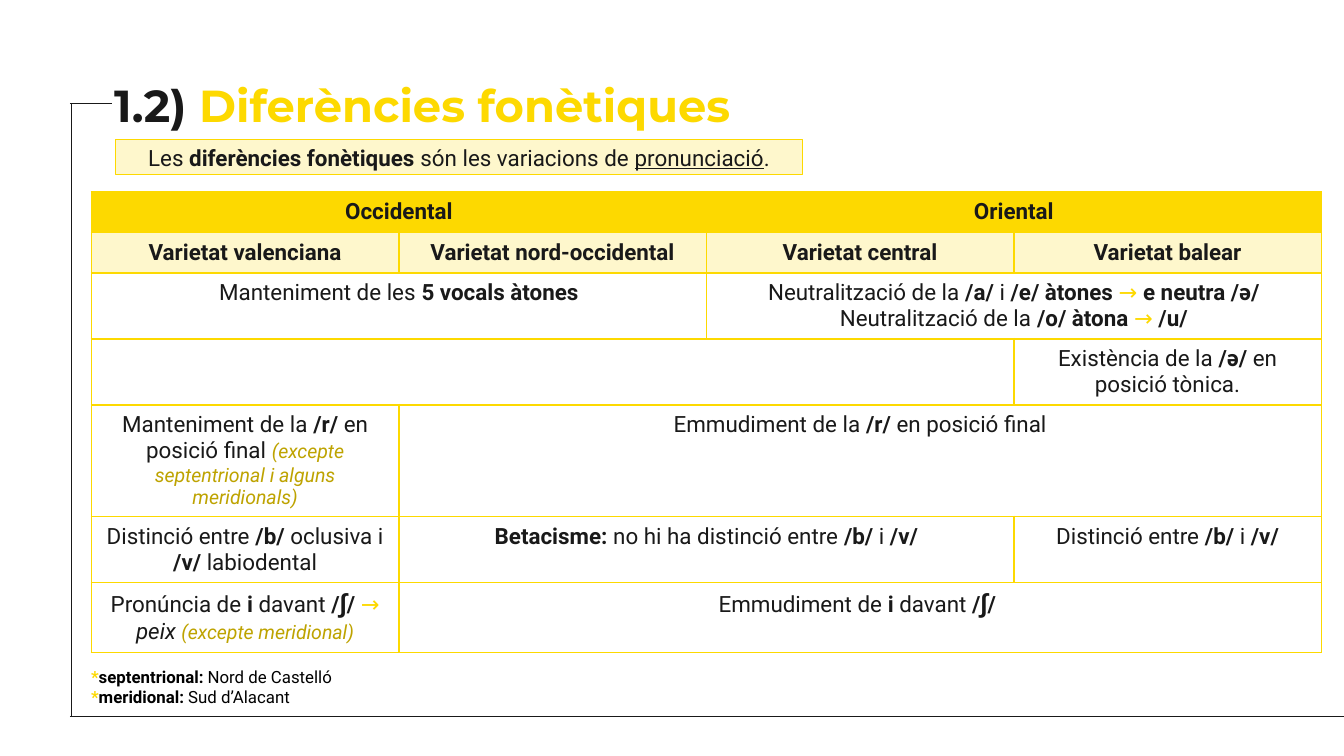
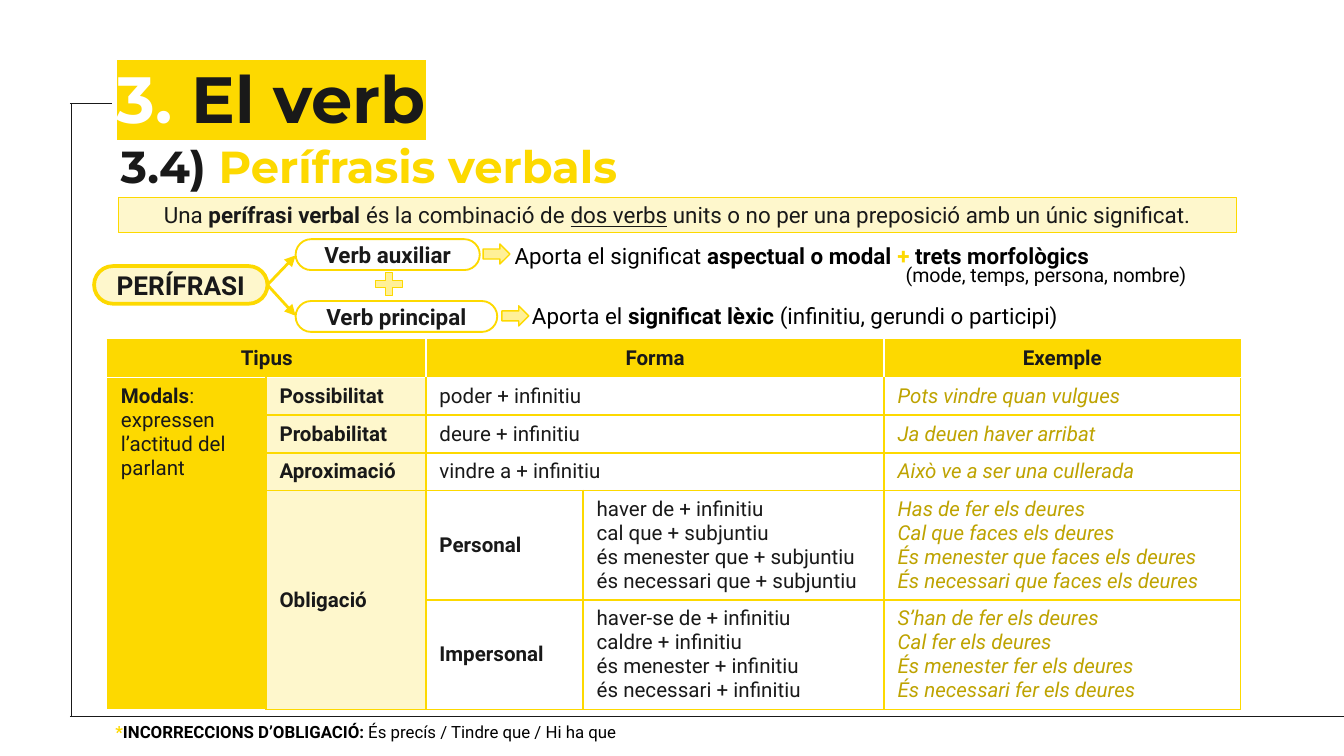
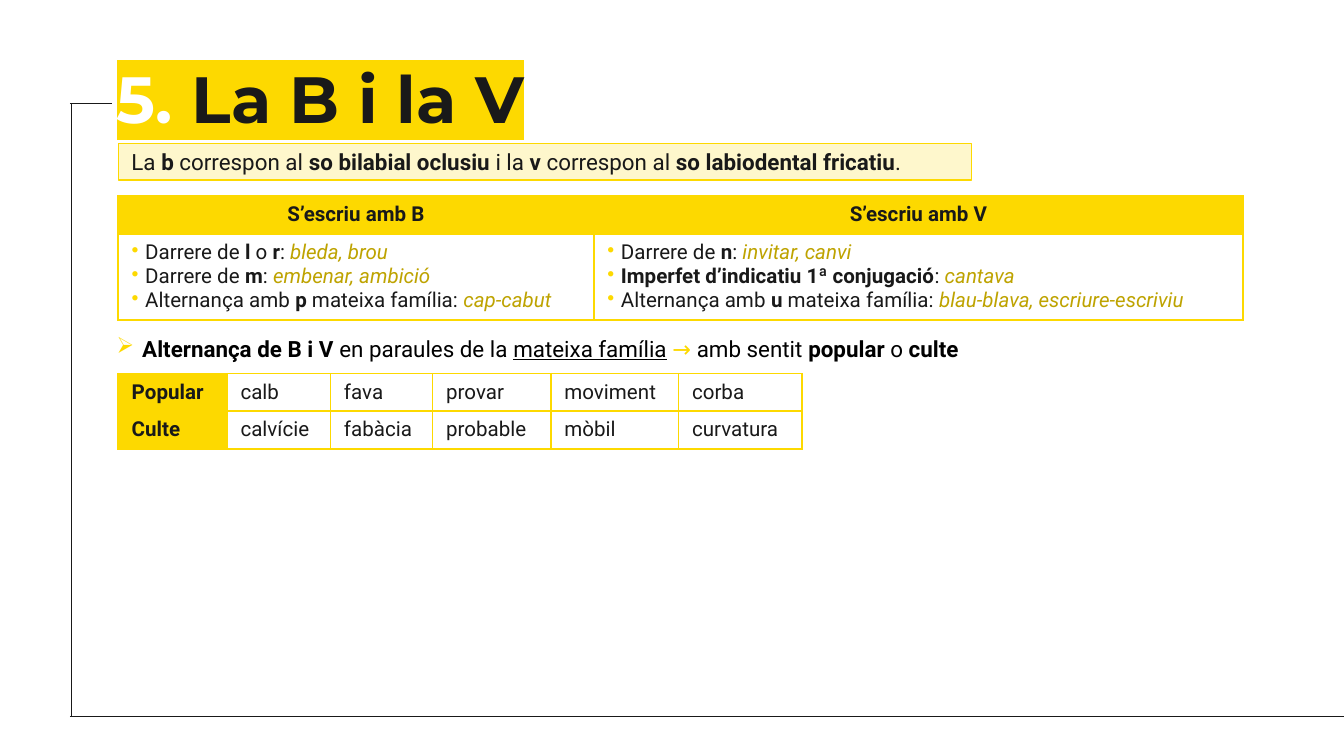
from dataclasses import dataclass, replace
from itertools import product
from typing import NamedTuple, Optional

from lxml import etree
from pptx import Presentation
from pptx import util as u
from pptx.dml.color import RGBColor
from pptx.enum import shapes, text
from pptx.oxml.ns import qn


@dataclass(frozen=True)
class Theme:
    accent: str = "FDD900"
    soft: str = "FFF098"
    muted: str = "BEA300"
    ink: str = "191919"
    black: str = "000000"
    white: str = "FFFFFF"
    heading_font: str = "Montserrat"
    body_font: str = "Roboto"
    symbol_font: str = "Arial"
    title: float = 35
    subtitle: float = 24
    label: float = 14
    body: float = 12
    cell: float = 11
    small: float = 10.5
    note: float = 9
    pale_alpha: int = 20


T = Theme()
MODULE = u.Inches(0.1)  # the slide is a grid of 100 columns by 56.25 rows
GRID_COLS, GRID_ROWS = 100, 56.25
PALE = "pale"
CENTER, LEFT = text.PP_ALIGN.CENTER, text.PP_ALIGN.LEFT
TOP, MIDDLE = text.MSO_ANCHOR.TOP, text.MSO_ANCHOR.MIDDLE
SHAPE = shapes.MSO_SHAPE


@dataclass(frozen=True)
class TextStyle:
    size: float
    color: str = T.ink
    font: str = T.body_font
    bold: bool = False
    italic: bool = False
    underline: bool = False
    highlight: str = ""


TITLE = TextStyle(T.title, font=T.heading_font, bold=True, highlight=T.accent)
SUBTITLE = TextStyle(T.subtitle, font=T.heading_font, bold=True)
BODY = TextStyle(T.body)
CELL = TextStyle(T.cell)
FREE = TextStyle(T.body, T.black)
NOTE = TextStyle(T.note, T.black)

# Each mark switches a change of style on, and off again at its next use.
MARKS = {
    "^": {"bold": True},
    "_": {"underline": True},
    "%": {"italic": True},
    "~": {"italic": True, "color": T.muted},
    "`": {"color": T.accent},
    "§": {"color": T.white},
    "¬": {"size": T.small},
    "¦": {"size": T.label, "font": T.symbol_font},
}


class Box(NamedTuple):
    """Left, top, width and height in grid modules."""
    left: float
    top: float
    width: float
    height: float


class Bullet(NamedTuple):
    char: str
    indent: float


class Pill(NamedTuple):
    box: Box
    label: str
    style: TextStyle
    fill: str
    weight: float


class Icon(NamedTuple):
    kind: shapes.MSO_SHAPE
    box: Box
    rotation: int


@dataclass(frozen=True)
class Cell:
    markup: str = ""
    cols: int = 1
    rows: int = 1
    fill: str = ""
    align: text.PP_ALIGN = LEFT
    anchor: text.MSO_ANCHOR = TOP
    bullet: Optional[Bullet] = None
    white_sides: str = ""


def grid(value: float) -> int:
    return round(value * MODULE)


def place(box: Box) -> list[int]:
    return [grid(v) for v in box]


def sub(parent, tag: str, **attrs):
    return etree.SubElement(parent, qn(tag), attrs)


def split_marks(markup: str, base: TextStyle) -> list[tuple[str, TextStyle]]:
    """Cut one marked paragraph into pieces of text with their styles."""
    pieces, active, piece = [], [], ""
    for char in markup + "\n":
        if char not in MARKS and char != "\n":
            piece += char
            continue
        if piece:
            style = base
            for mark in active:
                style = replace(style, **MARKS[mark])
            pieces.append((piece, style))
            piece = ""
        if char in active:
            active.remove(char)
        else:
            active.append(char)
    return pieces


def format_run(r, style: TextStyle) -> None:
    font = r.font
    font.size = u.Pt(style.size)
    font.bold, font.italic, font.underline = style.bold, style.italic, style.underline
    font.color.rgb = RGBColor.from_string(style.color)
    if style.highlight:
        mark = sub(r._r.get_or_add_rPr(), "a:highlight")
        sub(mark, "a:srgbClr", val=style.highlight)
    font.name = style.font


def add_bullet(p, bullet: Bullet) -> None:
    pPr = p._p.get_or_add_pPr()
    pPr.set("marL", str(grid(bullet.indent)))
    pPr.set("indent", str(-grid(bullet.indent)))
    sub(sub(pPr, "a:buClr"), "a:srgbClr", val=T.accent)
    sub(pPr, "a:buChar", char=bullet.char)


def write(tf, markup: str, style: TextStyle, align=LEFT, bullet: Optional[Bullet] = None,
          spacing: Optional[float] = None) -> None:
    for i, line in enumerate(markup.split("\n")):
        p = tf.add_paragraph() if i else tf.paragraphs[0]
        p.alignment = align
        if spacing:
            p.line_spacing = u.Pt(spacing)
        if bullet:
            add_bullet(p, bullet)
        for piece, piece_style in split_marks(line, style):
            r = p.add_run()
            r.text = piece
            format_run(r, piece_style)


def set_frame(tf, anchor, vertical_inset: float) -> None:
    tf.word_wrap = True
    tf.auto_size = text.MSO_AUTO_SIZE.NONE
    tf.vertical_anchor = anchor
    tf.margin_left = tf.margin_right = grid(1)
    tf.margin_top = tf.margin_bottom = grid(vertical_inset)


def set_fill(fill, props, color: str) -> None:
    """Fill a shape or cell; PALE is the accent made transparent."""
    if not color:
        fill.background()
        return
    fill.solid()
    fill.fore_color.rgb = RGBColor.from_string(T.accent if color == PALE else color)
    if color == PALE:
        rgb = props.find(qn("a:solidFill"))[0]
        sub(rgb, "a:alpha", val=str(T.pale_alpha * 1000))


def add_title(slide, box: Box, markup: str, style: TextStyle) -> None:
    sp = slide.shapes.title
    sp.left, sp.top, sp.width, sp.height = place(box)
    set_frame(sp.text_frame, TOP, 1)
    write(sp.text_frame, markup, style)


def add_text(slide, box: Box, markup: str, style: TextStyle, **options) -> None:
    tf = slide.shapes.add_textbox(*place(box)).text_frame
    set_frame(tf, TOP, 1)
    write(tf, markup, style, **options)


def add_shape(slide, kind, box: Box, fill: str, weight: float = 0.75):
    sp = slide.shapes.add_shape(kind, *place(box))
    sp.shadow.inherit = False
    set_fill(sp.fill, sp.element.spPr, fill)
    sp.line.color.rgb = RGBColor.from_string(T.accent)
    sp.line.width = u.Pt(weight)
    return sp


def add_definition(slide, box: Box, markup: str, align=CENTER) -> None:
    sp = add_shape(slide, SHAPE.RECTANGLE, box, PALE)
    set_frame(sp.text_frame, MIDDLE, 0)
    write(sp.text_frame, markup, BODY, align)


def add_pill(slide, pill: Pill) -> None:
    sp = add_shape(slide, SHAPE.ROUNDED_RECTANGLE, pill.box, pill.fill, pill.weight)
    sp.adjustments[0] = 0.5
    set_frame(sp.text_frame, MIDDLE, 0)
    write(sp.text_frame, pill.label, pill.style, CENTER)


def add_line(slide, ends: tuple, color: str, weight: float, arrow: bool = False):
    line = slide.shapes.add_connector(shapes.MSO_CONNECTOR.STRAIGHT, *map(grid, ends))
    line.line.color.rgb = RGBColor.from_string(color)
    line.line.width = u.Pt(weight)
    if arrow:
        sub(line.line._get_or_add_ln(), "a:tailEnd", type="triangle")
    sub(line.element.spPr, "a:effectLst")
    return line


def set_borders(tcPr, white_sides: str) -> None:
    for side in "LRTB":
        ln = sub(tcPr, f"a:ln{side}", w=str(u.Pt(1)))
        color = T.white if side in white_sides else T.accent
        sub(sub(ln, "a:solidFill"), "a:srgbClr", val=color)


def add_table(slide, left: float, top: float, widths: list[float], heights: list[float],
              rows: list[list[Cell]], style: TextStyle) -> None:
    """Draw rows of cells; places taken by a span are skipped."""
    box = Box(left, top, sum(widths), sum(heights))
    table = slide.shapes.add_table(len(heights), len(widths), *place(box)).table
    table.first_row = table.horz_banding = False
    for column, width in zip(table.columns, widths):
        column.width = grid(width)
    for row, height in zip(table.rows, heights):
        row.height = grid(height)
    taken = set()
    for i, cells in enumerate(rows):
        for item in cells:
            j = next(c for c in range(len(widths)) if (i, c) not in taken)
            span = list(product(range(i, i + item.rows), range(j, j + item.cols)))
            taken.update(span)
            for place_in_span in span:
                cell = table.cell(*place_in_span)
                tcPr = cell._tc.get_or_add_tcPr()
                set_borders(tcPr, item.white_sides)
                set_fill(cell.fill, tcPr, item.fill)
            cell = table.cell(i, j)
            if len(span) > 1:
                cell.merge(table.cell(*span[-1]))
            cell.vertical_anchor = item.anchor
            write(cell.text_frame, item.markup, style, item.align, item.bullet)


def centered(markup: str = "", cols: int = 1, fill: str = "") -> Cell:
    return Cell(markup, cols, fill=fill, align=CENTER)


def header(label: str, cols: int = 1, white_sides: str = "") -> Cell:
    return Cell(f"^{label}", cols, fill=T.accent, align=CENTER, white_sides=white_sides)


def add_frame(slide, layout) -> None:
    """Put the thin frame on the layout, so that every slide shows it."""
    segments = [(5.2, 7.7, 8.3, 7.7), (5.3, 7.7, 5.3, 53.3), (5.2, 53.3, 101.5, 53.3)]
    for number, ends in enumerate(segments, start=20):
        line = add_line(slide, ends, T.ink, 0.75)
        line.element.nvCxnSpPr.cNvPr.set("id", str(number))
        layout.shapes.element.append(line.element)


def build_phonetics(slide) -> None:
    add_definition(slide, Box(8.6, 10.4, 51.1, 2.6),
                   "Les ^diferències fonètiques^ són les variacions de _pronunciació_.")
    add_title(slide, Box(7.5, 4.8, 49.1, 4.2), "1.2) `Diferències fonètiques", SUBTITLE)
    varieties = ["valenciana", "nord-occidental", "central", "balear"]
    rows = [
        [header("Occidental", 2), header("Oriental", 2)],
        [centered(f"^Varietat {name}", fill=PALE) for name in varieties],
        [centered("Manteniment de les ^5 vocals àtones", 2),
         centered("Neutralització de la ^/a/ ^i ^/e/ àtones ^`→ `^e neutra /ə/\n"
                  "Neutralització de la ^/o/ àtona ^`→ `^/u/", 2)],
        [centered(cols=3), centered("Existència de la ^/ə/^ en posició tònica.")],
        [centered("Manteniment de la ^/r/^ en posició final "
                  "~¬(excepte septentrional i alguns meridionals)"),
         centered("Emmudiment de la ^/r/^ en posició final", 3)],
        [centered("Distinció entre ^/b/^ oclusiva i ^/v/ ^labiodental"),
         centered("^Betacisme: ^no hi ha distinció entre ^/b/^ i ^/v/", 2),
         centered("Distinció entre ^/b/^ i ^/v/")],
        [centered("Pronúncia de ^i^ davant ^/¦∫¦/ ^`→ `%peix %~¬(excepte meridional)"),
         centered("Emmudiment de ^i ^davant ^/¦∫¦/ ", 3)],
    ]
    add_table(slide, 6.8, 14.3, [22.88] * 4, [3, 3, 4.9, 4.9, 8.3, 4.9, 5.2], rows, BODY)
    add_text(slide, Box(5.8, 48.6, 22, 4.2),
             "^`*`septentrional:^ Nord de Castelló\n^`*`meridional:^ Sud d’Alacant", NOTE)


def build_periphrases(slide) -> None:
    add_title(slide, Box(7.7, 3.3, 84.3, 6.3), "§3. §El verb", TITLE)
    add_text(slide, Box(8, 9.3, 44.5, 4.2), "3.4) `Perífrasis verbals", SUBTITLE)
    add_definition(slide, Box(8.8, 14.7, 83.2, 2.6),
                   "Una ^perífrasi verbal^ és la combinació de _dos verbs_ units o no "
                   "per una preposició amb un únic significat.")

    strong = replace(BODY, bold=True)
    for pill in [
        Pill(Box(22, 17.8, 13.7, 2.3), "Verb auxiliar", strong, "", 1),
        Pill(Box(7, 19.8, 12.9, 2.8), "PERÍFRASI", replace(strong, size=T.label), PALE, 2),
        Pill(Box(22, 22.4, 15, 2.3), "Verb principal", strong, "", 1),
    ]:
        add_pill(slide, pill)
    for icon in [
        Icon(SHAPE.DOWN_ARROW, Box(36.2, 17.9, 1.5, 2), 270),
        Icon(SHAPE.DOWN_ARROW, Box(37.6, 22.5, 1.5, 2), 270),
        Icon(SHAPE.MATH_PLUS, Box(27.6, 20, 2.7, 2.3), 0),
    ]:
        add_shape(slide, icon.kind, icon.box, T.soft).rotation = icon.rotation
    for end in (19, 23.5):
        add_line(slide, (19.9, 21.2, 22, end), T.accent, 1.5, arrow=True)
    add_text(slide, Box(37.3, 17, 60.9, 4.2),
             "Aporta el significat ^aspectual o modal `+ `trets morfològics", FREE)
    add_text(slide, Box(66.4, 19.1, 24.1, 2.6), "¬(mode, temps, persona, nombre)", FREE,
             spacing=9)
    add_text(slide, Box(38.6, 21.5, 60.9, 4.2),
             "Aporta el ^significat lèxic^ (infinitiu, gerundi o participi)", FREE)

    def kind(label: str, rows: int = 1, white_sides: str = "") -> Cell:
        return Cell(f"^{label}", rows=rows, fill=PALE, anchor=MIDDLE, white_sides=white_sides)

    def obligation(label: str, forms: list[str], examples: list[str]) -> list[Cell]:
        return [Cell(f"^{label}", anchor=MIDDLE), Cell("\n".join(forms)),
                Cell("\n".join(f"~{example}" for example in examples))]

    rows = [
        [header("Tipus", 2, "RB"), header("Forma", 2, "LRB"), header("Exemple", 1, "LB")],
        [Cell("^Modals^: expressen l’actitud del parlant", rows=5, fill=T.accent,
              white_sides="TB"),
         kind("Possibilitat", white_sides="T"),
         Cell("poder + infinitiu", 2, white_sides="T"),
         Cell("~Pots vindre quan vulgues", white_sides="T")],
        [kind("Probabilitat"), Cell("deure + infinitiu", 2), Cell("~Ja deuen haver arribat")],
        [kind("Aproximació"), Cell("vindre a + infinitiu", 2),
         Cell("~Això ve a ser una cullerada")],
        [kind("Obligació", 2)] + obligation(
            "Personal",
            ["haver de + infinitiu", "cal que + subjuntiu",
             "és menester que + subjuntiu", "és necessari que + subjuntiu"],
            ["Has de fer els deures", "Cal que faces els deures",
             "És menester que faces els deures", "És necessari que faces els deures"]),
        obligation(
            "Impersonal",
            ["haver-se de + infinitiu", "caldre + infinitiu",
             "és menester + infinitiu", "és necessari + infinitiu"],
            ["S’han de fer els deures", "Cal fer els deures",
             "És menester fer els deures", "És necessari fer els deures"]),
    ]
    add_table(slide, 8, 25.3, [11.8, 11.9, 11.7, 22.4, 26.5], [2.8] * 4 + [8.15] * 2,
              rows, CELL)
    add_text(slide, Box(7.6, 52.7, 53.8, 2.7),
             "^`*`INCORRECCIONS D’OBLIGACIÓ:^ És precís / Tindre que / Hi ha que", NOTE)


def build_b_and_v(slide) -> None:
    add_title(slide, Box(7.7, 3.3, 84.3, 6.3), "§5. §La B i la V", TITLE)
    add_definition(slide, Box(8.8, 10.7, 63.5, 2.7),
                   "La ^b^ correspon al ^so bilabial oclusiu^ i la ^v^ correspon al "
                   "^so labiodental fricatiu^.", LEFT)
    dot = Bullet("•", 1)
    rules = [
        [header("S’escriu amb B"), header("S’escriu amb V")],
        [Cell("Darrere de ^l^ o ^r^: ~bleda, brou\n"
              "Darrere de ^m^: ~embenar, ambició\n"
              "Alternança amb ^p^ mateixa família: ~cap-cabut", bullet=dot),
         Cell("Darrere de ^n^: ~invitar, canvi\n"
              "^Imperfet d’indicatiu 1ª conjugació^: ~cantava\n"
              "Alternança amb ^u^ mateixa família: ~blau-blava, escriure-escriviu",
              bullet=dot)],
    ]
    add_table(slide, 8.8, 14.6, [35.4, 48.3], [2.8, 6.4], rules, CELL)
    add_text(slide, Box(7.7, 23.9, 84.3, 4.2),
             "^Alternança de B i V^ en paraules de la _mateixa família_ `→` amb sentit "
             "^popular^ o ^culte", FREE, bullet=Bullet("➢", 1.9))
    words = {
        "Popular": ["calb", "fava", "provar", "moviment", "corba"],
        "Culte": ["calvície", "fabàcia", "probable", "mòbil", "curvatura"],
    }
    rows = [[Cell(f"^{label}", fill=T.accent)] + [Cell(word) for word in row]
            for label, row in words.items()]
    add_table(slide, 8.8, 27.8, [8.1, 7.7, 7.6, 8.8, 9.5, 9.2], [2.8] * 2, rows, CELL)


def main() -> None:
    prs = Presentation()
    prs.slide_width, prs.slide_height = grid(GRID_COLS), grid(GRID_ROWS)
    layout = prs.slide_layouts.get_by_name("Title Only")
    for number, build in enumerate([build_phonetics, build_periphrases, build_b_and_v]):
        slide = prs.slides.add_slide(layout)
        if number == 0:
            add_frame(slide, layout)
        build(slide)
    prs.save("out.pptx")


if __name__ == "__main__":
    main()
